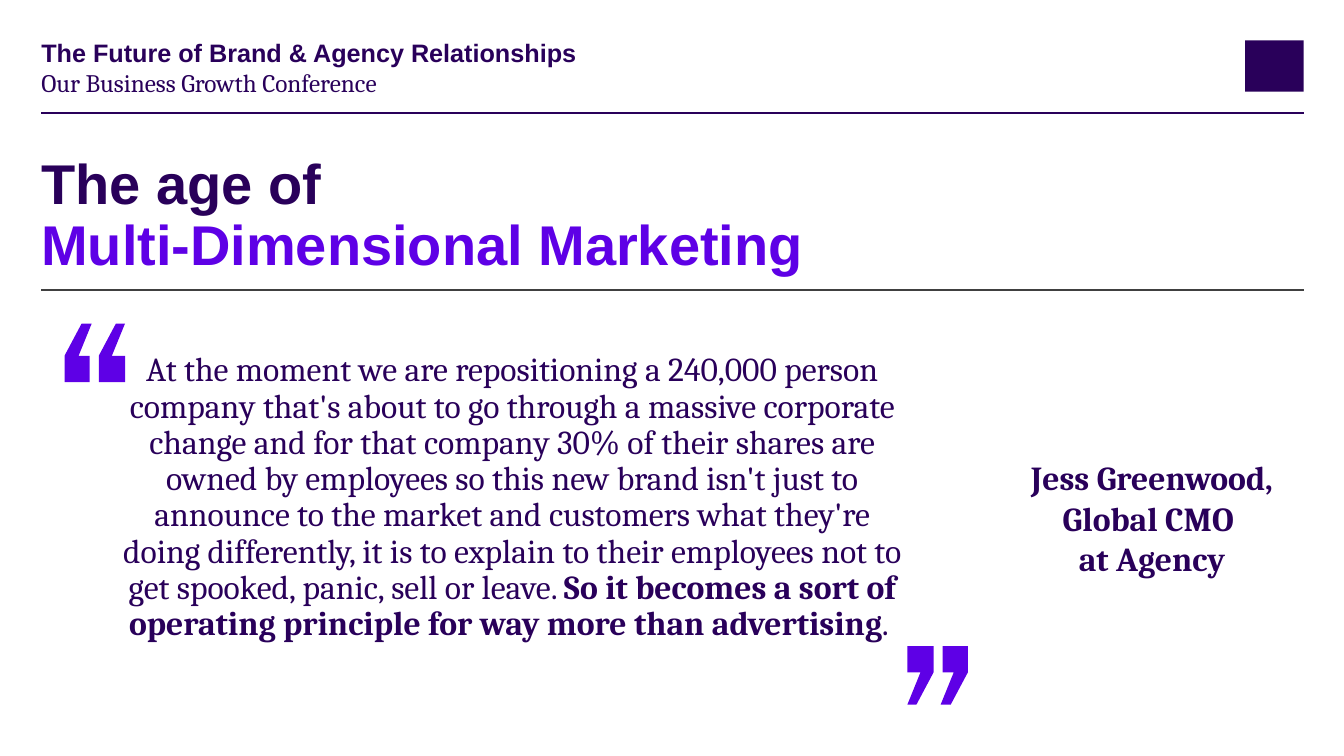
from lxml.etree import SubElement
from pptx import Presentation
from pptx.dml.color import RGBColor
from pptx.enum.shapes import MSO_CONNECTOR, MSO_SHAPE
from pptx.enum.text import MSO_ANCHOR, PP_ALIGN
from pptx.oxml.ns import qn
from pptx.util import Inches, Pt

COLORS = {"ink": "29005A", "violet": "5E00E6", "rule": "404040"}
WIDTH, HEIGHT = 13.33, 7.5
LEFT, RIGHT = 0.41, 12.93

deck = Presentation()
deck.slide_width, deck.slide_height = Inches(WIDTH), Inches(HEIGHT)
slide = deck.slides.add_slide(deck.slide_layouts[5])


def set_text(shape, lines, size, font, bold=False, align=PP_ALIGN.LEFT,
             spacing=0.9, anchor=MSO_ANCHOR.TOP):
    """Fill a text shape without insets and format every run alike."""
    frame = shape.text_frame
    frame.text = lines
    frame.word_wrap = True
    frame.vertical_anchor = anchor
    frame.margin_left = frame.margin_right = 0
    frame.margin_top = frame.margin_bottom = 0
    for paragraph in frame.paragraphs:
        paragraph.alignment = align
        paragraph.line_spacing = spacing
        paragraph.space_before = Pt(0)
        for run in paragraph.runs:
            run.font.size, run.font.name, run.font.bold = Pt(size), font, bold
            run.font.color.rgb = RGBColor.from_string(COLORS["ink"])
    return frame


def paint(shape, color):
    """Give a shape a plain fill, with no outline or shadow."""
    shape.fill.solid()
    shape.fill.fore_color.rgb = RGBColor.from_string(COLORS[color])
    shape.line.fill.background()
    shape.shadow.inherit = False


# Rules under the header and under the title
for y, color in ((1.12, "ink"), (2.88, "rule")):
    rule = slide.shapes.add_connector(
        MSO_CONNECTOR.STRAIGHT, Inches(LEFT), Inches(y), Inches(RIGHT), Inches(y))
    rule.line.color.rgb = RGBColor.from_string(COLORS[color])
    rule.line.width = Pt(1.5)
    SubElement(rule._element.spPr, qn("a:effectLst"))

# Plain block in the header corner
corner = slide.shapes.add_shape(
    MSO_SHAPE.RECTANGLE, Inches(12.35), Inches(0.4), Inches(RIGHT - 12.35), Inches(0.51))
paint(corner, "ink")

# Header: talk and event
header = (("The Future of Brand & Agency Relationships", "Arial", True),
          ("Our Business Growth Conference", "Cambria", False))
for row, (words, font, bold) in enumerate(header):
    header_line = slide.shapes.add_textbox(
        Inches(LEFT), Inches(0.4 + 0.3 * row), Inches(8.27), Inches(0.27))
    set_text(header_line, words, 18, font, bold)

# Title on two lines, the second in violet
title = slide.shapes.title
title.left, title.top = Inches(LEFT), Inches(1.55)
title.width, title.height = Inches(RIGHT - LEFT), Inches(1.21)
title_frame = set_text(title, "The age of\vMulti-Dimensional Marketing", 40, "Arial", True)
title_frame.paragraphs[0].space_after = Pt(8)
title_frame.paragraphs[0].runs[1].font.color.rgb = RGBColor.from_string(COLORS["violet"])

# Quotation, with its conclusion in bold
quote = slide.shapes.add_textbox(Inches(1.21), Inches(3.5), Inches(7.74), Inches(3.27))
quote_frame = set_text(
    quote,
    "At the moment we are repositioning a 240,000 person company that's about to go "
    "through a massive corporate change and for that company 30% of their shares are "
    "owned by employees so this new brand isn't just to announce to the market and "
    "customers what they're doing differently, it is to explain to their employees "
    "not to get spooked, panic, sell or leave. ",
    24, "Cambria", align=PP_ALIGN.CENTER)
conclusion = "So it becomes a sort of operating principle for way more than advertising"
for words, bold in ((conclusion, True), (". ", False)):
    run = quote_frame.paragraphs[0].add_run()
    run.text = words
    run.font.size, run.font.name, run.font.bold = Pt(24), "Cambria", bold
    run.font.color.rgb = RGBColor.from_string(COLORS["ink"])

# Quotation marks: the closing mark is the opening one turned by 180 degrees
TICKS = (
    ((0, 0.58), (0, 0.32), (0.17, 0), (0.27, 0), (0.14, 0.32), (0.25, 0.32), (0.25, 0.58)),
    ((0.34, 0.58), (0.34, 0.32), (0.51, 0), (0.6, 0), (0.47, 0.32), (0.6, 0.32), (0.6, 0.58)),
)
for origin_x, origin_y, turn in ((0.64, 3.21, 1), (9.6, 6.99, -1)):
    outlines = [[(Inches(origin_x + turn * x), Inches(origin_y + turn * y)) for x, y in tick]
                for tick in TICKS]
    builder = slide.shapes.build_freeform(*outlines[0][0])
    builder.add_line_segments(outlines[0][1:], close=True)
    builder.move_to(*outlines[1][0])
    builder.add_line_segments(outlines[1][1:], close=True)
    paint(builder.convert_to_shape(), "violet")

# Speaker
speaker = slide.shapes.add_textbox(Inches(9.73), Inches(4.53), Inches(3.39), Inches(1.21))
set_text(speaker, "Jess Greenwood,\nGlobal CMO \nat Agency", 24, "Cambria", True,
         PP_ALIGN.CENTER, 1.0, MSO_ANCHOR.MIDDLE)

deck.save("out.pptx")
